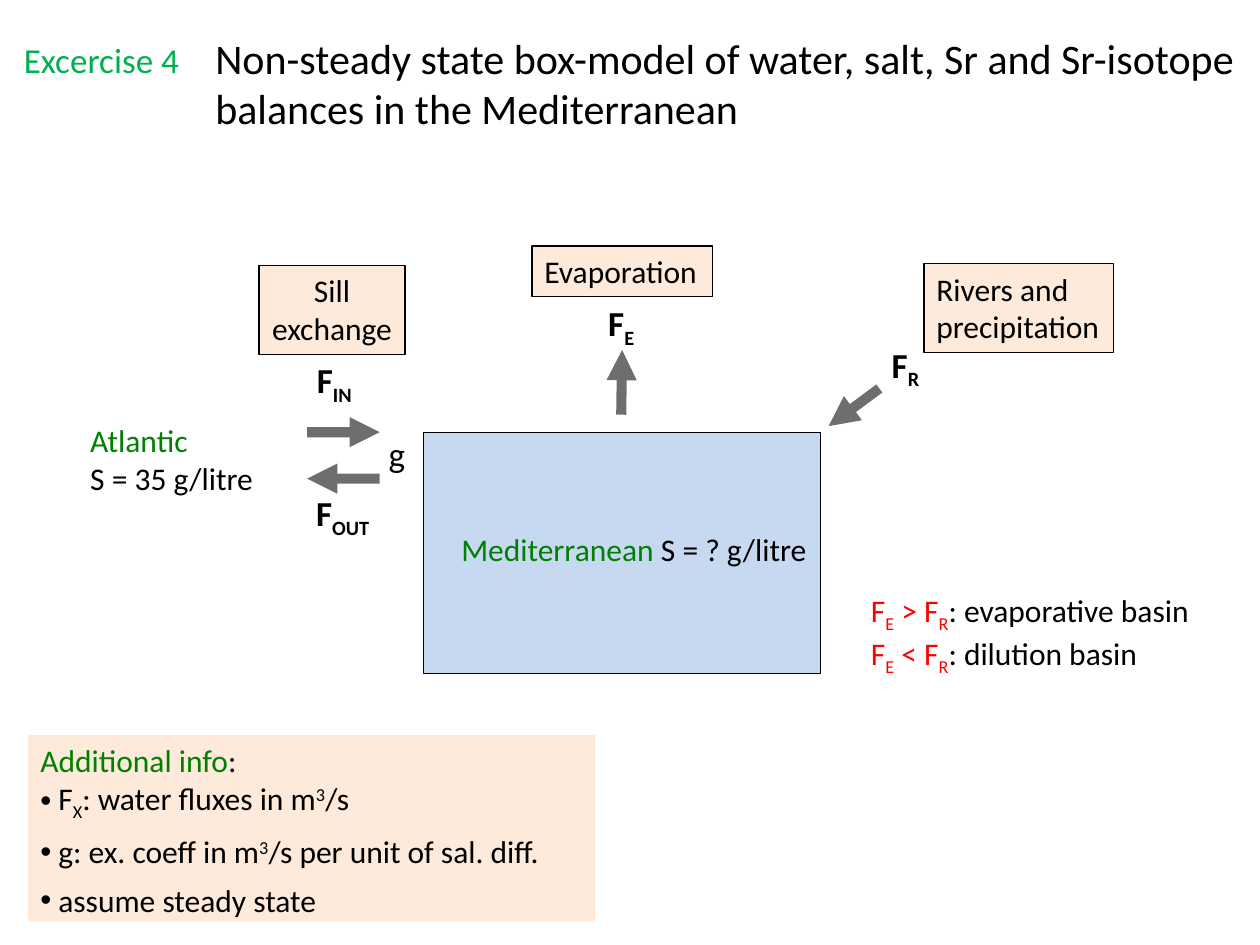
import pptx
import pptx.util
import pptx.dml.color
import pptx.enum.shapes
import pptx.enum.text
import pptx.oxml.ns
import lxml.etree

Pt = pptx.util.Pt
COLORS = {"black": "000000", "green": "008000", "title": "00B050", "red": "FF0000",
          "peach": "FDEADA", "blue": "C6D9F1"}
SUB, SUP = -25, 30


def rgb(name):
    return pptx.dml.color.RGBColor.from_string(COLORS[name])


def sub(parent, tag, **attrs):
    return lxml.etree.SubElement(parent, pptx.oxml.ns.qn(tag), attrs)


prs = pptx.Presentation()
prs.slide_width, prs.slide_height = Pt(720), Pt(540)
s = prs.slides.add_slide(prs.slide_layouts[6])

arrows = [
    (502.5, 222, 473.5, 243.5),
    (355, 237, 355.5, 200),
    (217, 273.5, 175.5, 273.5),
    (175.5, 247, 217, 247),
]
flux_labels = [("E", 340.5, 169, 30), ("R", 502.5, 192.5, 31),
               ("IN", 174, 201.5, 36), ("OUT", 173.5, 277.5, 49)]
basins = [[("F", "red", 0), ("E", "red", SUB), (sign, "red", 0), ("R", "red", SUB),
           (kind, "black", 0)]
          for sign, kind in [(" > F", ": evaporative basin"), (" < F", ": dilution basin")]]
info = [
    [("Additional info", "green", 0), (":", "black", 0)],
    [("F", "black", 0), ("X", "black", SUB), (": water fluxes in m", "black", 0),
     ("3", "black", SUP), ("/s", "black", 0)],
    [("g: ex. coeff in m", "black", 0), ("3", "black", SUP),
     ("/s per unit of sal. diff.", "black", 0)],
    [("assume steady state", "black", 0)],
]
plain = {"size": 18, "bold": False, "fill": None, "line": False, "wrap": False,
         "align": None, "anchor": "TOP", "bullets": False, "grow": True}
box = {"fill": "peach", "line": True}
texts = [
    ((6.5, 11, 103.5, 46.5), [[("Excercise 4", "title", 0)]],
     {"size": 20, "wrap": True, "anchor": "MIDDLE", "grow": False}),
    ((116, 15, 604, 65.5),
     [[("Non-steady state box-model of water, salt, Sr and Sr-isotope", "black", 0)],
      [("balances in the Mediterranean", "black", 0)]], {"size": 24}),
    ((256.5, 299.5, 214, 29),
     [[("Mediterranean ", "green", 0), ("S = ? g/litre", "black", 0)]], {}),
    ((44.5, 237, 108.5, 51),
     [[("Atlantic", "green", 0)], [("S = 35 g/litre", "black", 0)]], {}),
    ((215, 243.5, 24, 31.5), [[("g", "black", 0)]], {"size": 20}),
    ((528, 150.5, 108.5, 51),
     [[("Rivers and", "black", 0)], [("precipitation", "black", 0)]], box),
    ((304, 140.5, 103, 29), [[("Evaporation", "black", 0)]], box),
    ((148, 151.5, 83.5, 51),
     [[("Sill", "black", 0)], [("exchange", "black", 0)]], {**box, "align": "CENTER"}),
    ((16, 420, 324, 106.5), info, {"fill": "peach", "wrap": True, "bullets": True}),
    ((490.5, 334, 206, 51), basins, {}),
]
texts += [((x, y, w, 31.5), [[("F", "black", 0), (name, "black", SUB)]],
           {"size": 20, "bold": True}) for name, x, y, w in flux_labels]

sp = s.shapes.add_shape(pptx.enum.shapes.MSO_SHAPE.RECTANGLE,
                        Pt(242), Pt(247), Pt(227), Pt(138))
sp.shadow.inherit = False
sp.fill.solid()
sp.fill.fore_color.rgb = rgb("blue")
sp.line.color.rgb = rgb("black")
sp.line.width = Pt(0.75)

for ends in arrows:
    cn = s.shapes.add_connector(pptx.enum.shapes.MSO_CONNECTOR.STRAIGHT,
                                *[Pt(v) for v in ends])
    cn.line.color.rgb = rgb("black")
    cn.line.width = Pt(5.75)
    ln = cn.line._get_or_add_ln()
    sub(ln.find(".//" + pptx.oxml.ns.qn("a:srgbClr")), "a:alpha", val="57000")
    sub(ln, "a:tailEnd", type="triangle")
    sub(cn._element.spPr, "a:effectLst")

for place, paras, changes in texts:
    fmt = {**plain, **changes}
    pos = [Pt(v) for v in place]
    if fmt["fill"]:
        sp = s.shapes.add_shape(pptx.enum.shapes.MSO_SHAPE.RECTANGLE, *pos)
        sp.shadow.inherit = False
        sp.fill.solid()
        sp.fill.fore_color.rgb = rgb(fmt["fill"])
        if fmt["line"]:
            sp.line.color.rgb = rgb("black")
            sp.line.width = Pt(0.75)
        else:
            sp.line.fill.background()
    else:
        sp = s.shapes.add_textbox(*pos)
    tf = sp.text_frame
    sizing = pptx.enum.text.MSO_AUTO_SIZE
    frame = {"word_wrap": fmt["wrap"],
             "vertical_anchor": pptx.enum.text.MSO_ANCHOR[fmt["anchor"]],
             "auto_size": sizing.SHAPE_TO_FIT_TEXT if fmt["grow"] else sizing.NONE}
    for key, value in frame.items():
        setattr(tf, key, value)
    for i, runs in enumerate(paras):
        p = tf.add_paragraph() if i else tf.paragraphs[0]
        p.alignment = pptx.enum.text.PP_ALIGN[fmt["align"] or "LEFT"]
        if fmt["bullets"] and i:
            p.space_after = Pt(6)
            pPr = p._p.get_or_add_pPr()
            pPr.set("marL", str(Pt(10.3)))
            pPr.set("indent", str(Pt(-10.3)))
            sub(pPr, "a:buFont", typeface="Arial")
            sub(pPr, "a:buChar", char="•")
        for text, color, base in runs:
            r = p.add_run()
            r.text = text
            font = {"name": "Calibri", "size": Pt(fmt["size"]), "bold": fmt["bold"]}
            for key, value in font.items():
                setattr(r.font, key, value)
            r.font.color.rgb = rgb(color)
            if base:
                r._r.get_or_add_rPr().set("baseline", str(base * 1000))

prs.save("out.pptx")
